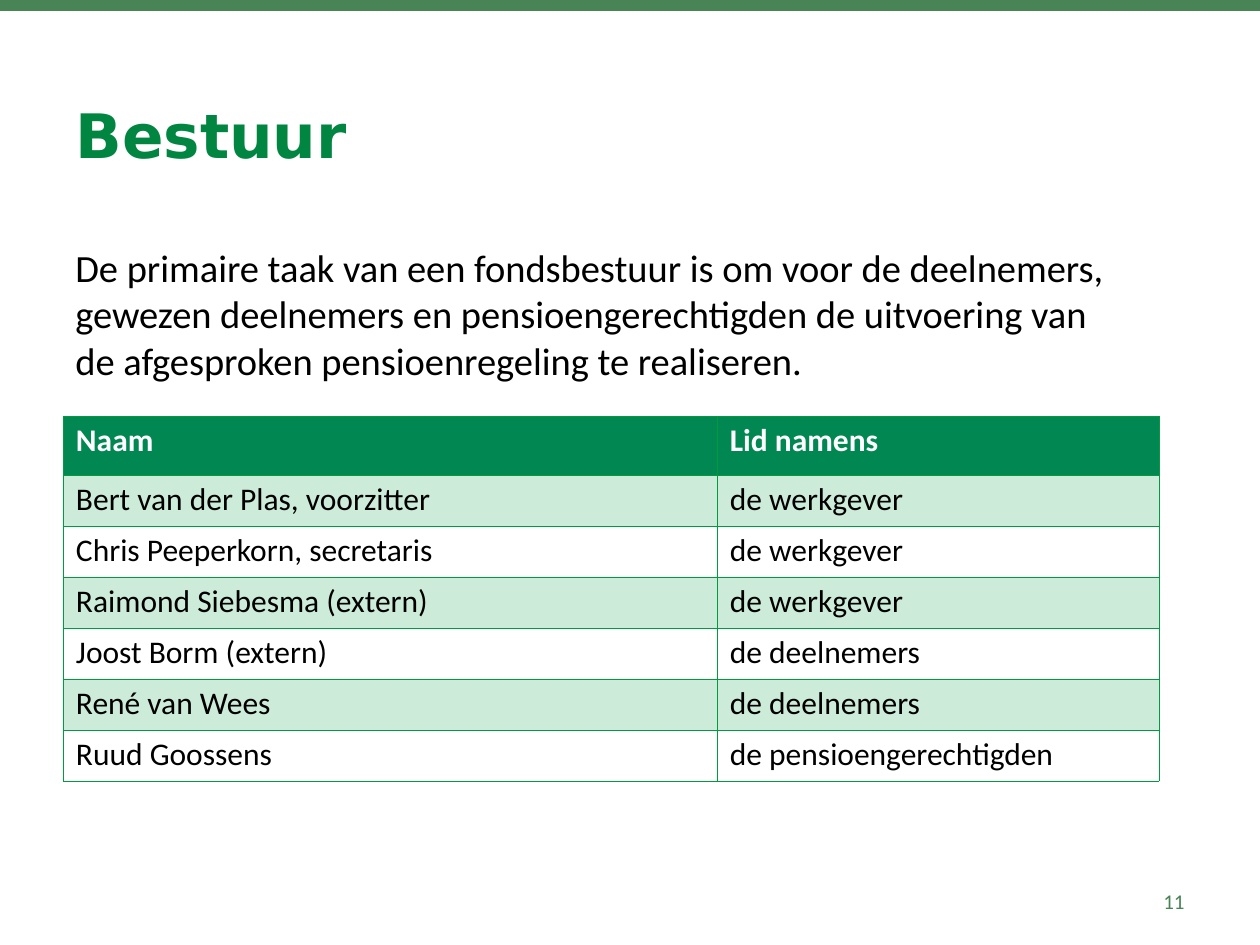
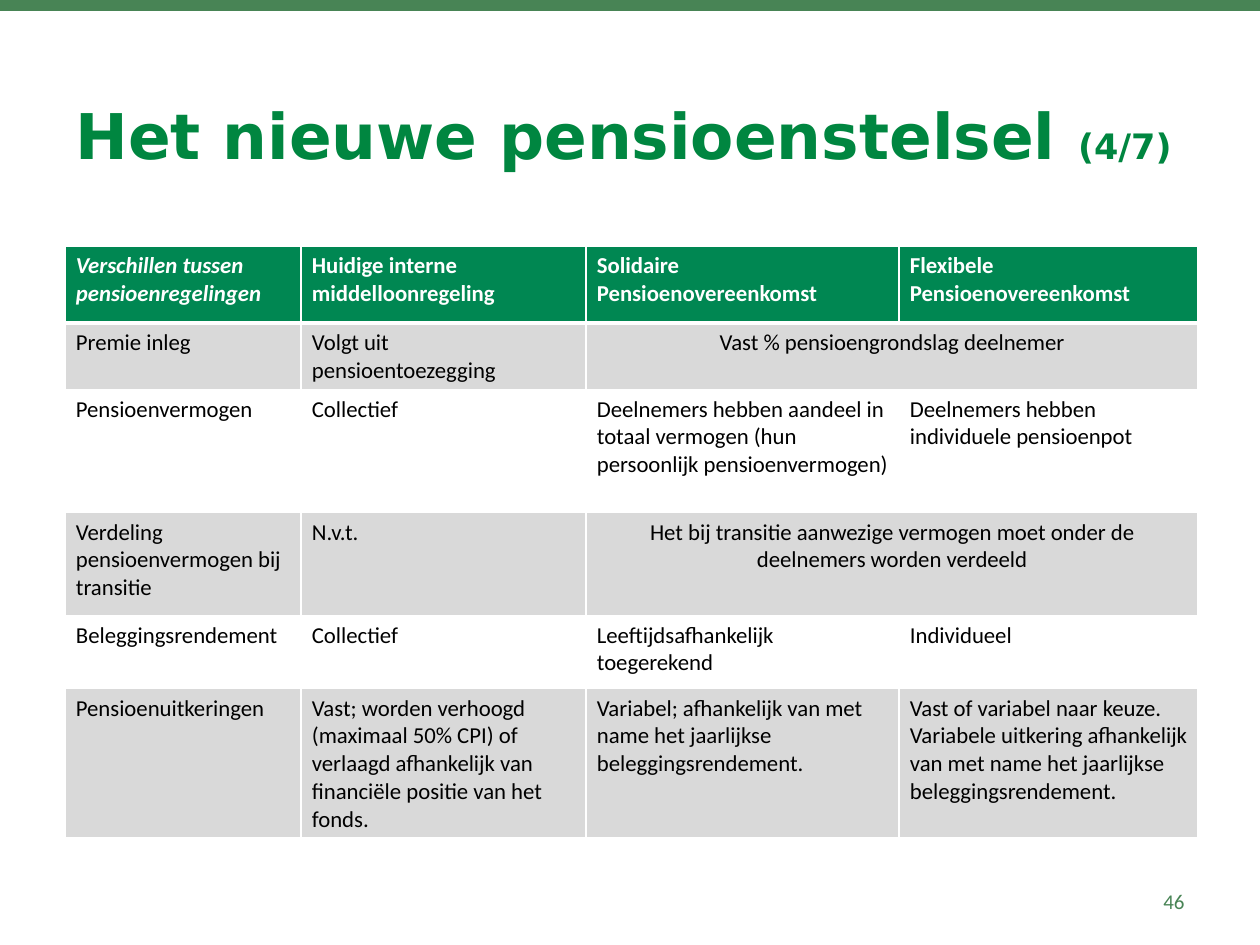
"""Build two pension fund slides: the board and the comparison of pension schemes."""
import pptx
import pptx.util
import pptx.dml.color
import pptx.enum.shapes
import pptx.enum.text
import pptx.oxml
from lxml import etree

COLORS = {"band": "488455", "title": "008640", "header": "008752", "grid": "009B3E",
          "mint": "CCEBD8", "grey": "D9D9D9", "white": "FFFFFF", "black": "000000"}
EMU_PER_PX = 914400 / 126
LEFT, CENTER, RIGHT = (pptx.enum.text.PP_ALIGN.LEFT, pptx.enum.text.PP_ALIGN.CENTER,
                       pptx.enum.text.PP_ALIGN.RIGHT)
TOP, MIDDLE = pptx.enum.text.MSO_ANCHOR.TOP, pptx.enum.text.MSO_ANCHOR.MIDDLE

board = {
    "title": [("Bestuur", 35)],
    "number": "11",
    "intro": "De primaire taak van een fondsbestuur is om voor de deelnemers, gewezen "
             "deelnemers en pensioengerechtigden de uitvoering van de afgesproken "
             "pensioenregeling te realiseren.",
    "corner": (63, 416), "columns": [654, 442], "heights": [59] + [51] * 6,
    "size": 18, "insets": (13, 6), "stripes": ("mint", "white"),
    "grid": "grid", "line": 0.25, "header_line": 0.25, "italic_corner": False,
    "rows": [
        ["Naam", "Lid namens"],
        ["Bert van der Plas, voorzitter", "de werkgever"],
        ["Chris Peeperkorn, secretaris", "de werkgever"],
        ["Raimond Siebesma (extern)", "de werkgever"],
        ["Joost Borm (extern)", "de deelnemers"],
        ["René van Wees", "de deelnemers"],
        ["Ruud Goossens", "de pensioengerechtigden"],
    ],
}
schemes = {
    "title": [("Het nieuwe pensioenstelsel ", 36), ("(4/7)", 20)],
    "number": "46",
    "intro": None,
    "corner": (65, 246), "columns": [236, 285, 313, 299],
    "heights": [77, 66, 123, 103, 73, 149],
    "size": 13, "insets": (11, 6), "stripes": ("grey", "white"),
    "grid": "white", "line": 1, "header_line": 3, "italic_corner": True,
    "rows": [
        ["Verschillen tussen pensioenregelingen", "Huidige interne middelloonregeling",
         "Solidaire Pensioenovereenkomst", "Flexibele Pensioenovereenkomst"],
        ["Premie inleg", "Volgt uit pensioentoezegging",
         "Vast % pensioengrondslag deelnemer", None],
        ["Pensioenvermogen", "Collectief",
         "Deelnemers hebben aandeel in totaal vermogen (hun persoonlijk pensioenvermogen)",
         "Deelnemers hebben individuele pensioenpot"],
        ["Verdeling pensioenvermogen bij transitie", "N.v.t.",
         "Het bij transitie aanwezige vermogen moet onder de deelnemers worden verdeeld",
         None],
        ["Beleggingsrendement", "Collectief", "Leeftijdsafhankelijk toegerekend",
         "Individueel"],
        ["Pensioenuitkeringen",
         "Vast; worden verhoogd (maximaal 50% CPI) of verlaagd afhankelijk van "
         "financiële positie van het fonds.",
         "Variabel; afhankelijk van met name het jaarlijkse beleggingsrendement.",
         "Vast of variabel naar keuze. Variabele uitkering afhankelijk van met name het "
         "jaarlijkse beleggingsrendement."],
    ],
}


def px(*lengths):
    return [pptx.util.Emu(round(length * EMU_PER_PX)) for length in lengths]


def add_text(slide, box, runs, color, font="Calibri", bold=False, align=LEFT, anchor=TOP):
    frame = slide.shapes.add_textbox(*px(*box)).text_frame
    frame.word_wrap = True
    frame.vertical_anchor = anchor
    paragraph = frame.paragraphs[0]
    paragraph.alignment = align
    for text, size in runs:
        run = paragraph.add_run()
        run.text = text
        run.font.name = font
        run.font.size = pptx.util.Pt(size)
        run.font.bold = bold
        run.font.color.rgb = pptx.dml.color.RGBColor.from_string(COLORS[color])


deck = pptx.Presentation()
deck.slide_width, deck.slide_height = px(1260, 945)

for topic in (board, schemes):
    slide = deck.slides.add_slide(deck.slide_layouts[6])
    band = slide.shapes.add_shape(pptx.enum.shapes.MSO_SHAPE.RECTANGLE, *px(0, -5, 1260, 16))
    band.shadow.inherit = False
    band.fill.solid()
    band.fill.fore_color.rgb = pptx.dml.color.RGBColor.from_string(COLORS["band"])
    band.line.fill.background()
    add_text(slide, (63, 66, 1134, 137), topic["title"], "title", "DejaVu Sans", True,
             anchor=MIDDLE)
    add_text(slide, (903, 876, 294, 50), [(topic["number"], 12)], "band", align=RIGHT,
             anchor=MIDDLE)

    rows, columns, heights = topic["rows"], topic["columns"], topic["heights"]
    overview = slide.shapes.add_table(
        len(rows), len(columns),
        *px(*topic["corner"], sum(columns), sum(heights))).table
    overview.first_row = overview.horz_banding = False
    for column, width in zip(overview.columns, px(*columns)):
        column.width = width
    for row, height in zip(overview.rows, px(*heights)):
        row.height = height

    for r, texts in enumerate(rows):
        for c, text in enumerate(texts):
            cell = overview.cell(r, c)
            properties = cell._tc.get_or_add_tcPr()
            for side in "LRTB":
                under_header = (r, side) in ((0, "B"), (1, "T"))
                weight = topic["header_line" if under_header else "line"]
                edge = etree.SubElement(properties, pptx.oxml.ns.qn(f"a:ln{side}"),
                                        w=str(pptx.util.Pt(weight)))
                paint = etree.SubElement(edge, pptx.oxml.ns.qn("a:solidFill"))
                etree.SubElement(paint, pptx.oxml.ns.qn("a:srgbClr"),
                                 val=COLORS[topic["grid"]])
            fill = "header" if r == 0 else topic["stripes"][(r - 1) % 2]
            cell.fill.solid()
            cell.fill.fore_color.rgb = pptx.dml.color.RGBColor.from_string(COLORS[fill])
            cell.margin_left, cell.margin_top = px(*topic["insets"])
            cell.margin_right, cell.margin_bottom = px(*topic["insets"])
            if text is None:
                shared = overview.cell(r, c - 1)
                shared.merge(cell)
                shared.text_frame.paragraphs[0].alignment = CENTER
                continue
            cell.text_frame.text = text
            font = cell.text_frame.paragraphs[0].runs[0].font
            font.name = "Calibri"
            font.size = pptx.util.Pt(topic["size"])
            font.bold = r == 0
            font.italic = topic["italic_corner"] and r == c == 0
            font.color.rgb = pptx.dml.color.RGBColor.from_string(
                COLORS["white" if r == 0 else "black"])

    if topic["intro"]:
        add_text(slide, (63, 238, 1063, 152), [(topic["intro"], 22)], "black")

deck.save("out.pptx")
